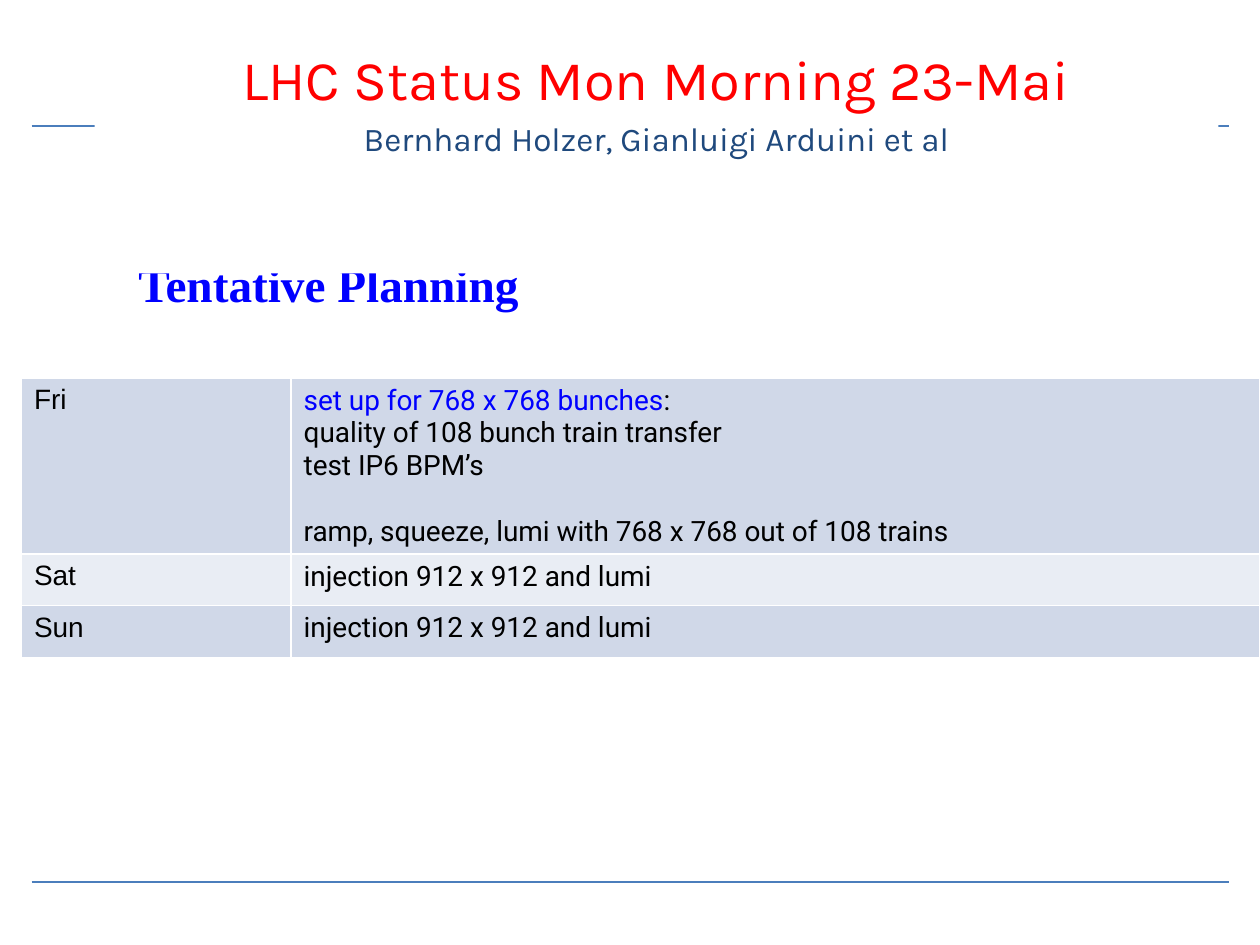
from lxml import etree
from pptx import Presentation
from pptx.dml.color import RGBColor
from pptx.enum.shapes import MSO_CONNECTOR
from pptx.enum.text import MSO_ANCHOR, MSO_AUTO_SIZE, PP_ALIGN
from pptx.oxml.ns import qn
from pptx.util import Inches, Pt

STRAIGHT = MSO_CONNECTOR.STRAIGHT
TOP = MSO_ANCHOR.TOP
CENTER = PP_ALIGN.CENTER
NO_FIT = MSO_AUTO_SIZE.NONE

COLORS = {name: RGBColor.from_string(value) for name, value in {
    "rule": "4B7EBC", "white": "FFFFFF", "black": "000000", "red": "FF0000",
    "blue": "0000FF", "navy": "1F497D", "dark band": "D0D8E8", "light band": "E9EDF4",
}.items()}


def style(font, name, size, color):
    font.name = name
    font.size = Pt(size)
    font.color.rgb = COLORS[color]


def add_borders(cell, color, width):
    properties = cell._tc.get_or_add_tcPr()
    for index, side in enumerate(("a:lnL", "a:lnR", "a:lnT", "a:lnB")):
        line = etree.Element(qn(side), w=str(Pt(width)))
        fill = etree.SubElement(line, qn("a:solidFill"))
        etree.SubElement(fill, qn("a:srgbClr"), val=str(COLORS[color]))
        properties.insert(index, line)


deck = Presentation()
deck.slide_width, deck.slide_height = Inches(10), Inches(7.5)
page = deck.slides.add_slide(deck.slide_layouts[5])

# Header and footer rules
for height in (1, 7):
    rule = page.shapes.add_connector(
        STRAIGHT, Inches(0.25), Inches(height), Inches(9.75), Inches(height))
    rule.line.color.rgb = COLORS["rule"]
    rule.line.width = Pt(1.5)
    etree.SubElement(rule._element.spPr, qn("a:effectLst"))

# Planning table
plan = [
    ("Fri", ["set up for 768 x 768 bunches:", "quality of 108 bunch train transfer",
             "test IP6 BPM’s", "ramp, squeeze, lumi with 768 x 768 out of 108 trains"]),
    ("Sat", ["injection 912 x 912 and lumi"]),
    ("Sun", ["injection 912 x 912 and lumi"]),
]
table = page.shapes.add_table(len(plan), 2, Inches(0.17), Inches(3),
                              Inches(9.83), Inches(2.21)).table
table.first_row = False
for column, width in zip(table.columns, (2.14, 7.69)):
    column.width = Inches(width)
for row, height in zip(table.rows, (1.39, 0.41, 0.41)):
    row.height = Inches(height)

for index, (day, tasks) in enumerate(plan):
    contents = (([day], "Arial"), (tasks, "Roboto"))
    for cell, (lines, font_name) in zip(table.rows[index].cells, contents):
        cell.text = "\n".join(lines)
        cell.fill.solid()
        cell.fill.fore_color.rgb = COLORS["light band" if index % 2 else "dark band"]
        add_borders(cell, "white", 1)
        for para in cell.text_frame.paragraphs:
            style(para.font, font_name, 16, "black")

# Friday: blue lead phrase, and a gap before the final step
friday = table.cell(0, 1).text_frame.paragraphs
lead = friday[0].runs[0]
lead.text = lead.text.rstrip(":")
lead.font.color.rgb = COLORS["blue"]
friday[0].add_run().text = ":"
friday[-1].space_before = Pt(19)

# Section heading
heading = page.shapes.add_textbox(Inches(1), Inches(1.98), Inches(3.25), Inches(0.56))
heading.text_frame.word_wrap = False
para = heading.text_frame.paragraphs[0]
para.text = "Tentative Planning"
style(para.font, "Times New Roman", 27, "blue")
para.font.bold = True

# Title panel, brought to the front so that it covers the header rule
title = page.shapes.title
title.left, title.top = Inches(0.75), Inches(0.25)
title.width, title.height = Inches(8.92), Inches(1.92)
title.fill.solid()
title.fill.fore_color.rgb = COLORS["white"]
frame = title.text_frame
frame.text = "LHC Status Mon Morning 23-Mai\nBernhard Holzer, Gianluigi Arduini et al"
frame.auto_size = NO_FIT
frame.vertical_anchor = TOP
frame.margin_top = Inches(0.1)
for para, size, color in zip(frame.paragraphs, (32, 19), ("red", "navy")):
    para.alignment = CENTER
    style(para.font, "Karla", size, color)
frame.paragraphs[1].space_before = Pt(4)
page.shapes._spTree.append(title._element)

deck.save("out.pptx")
